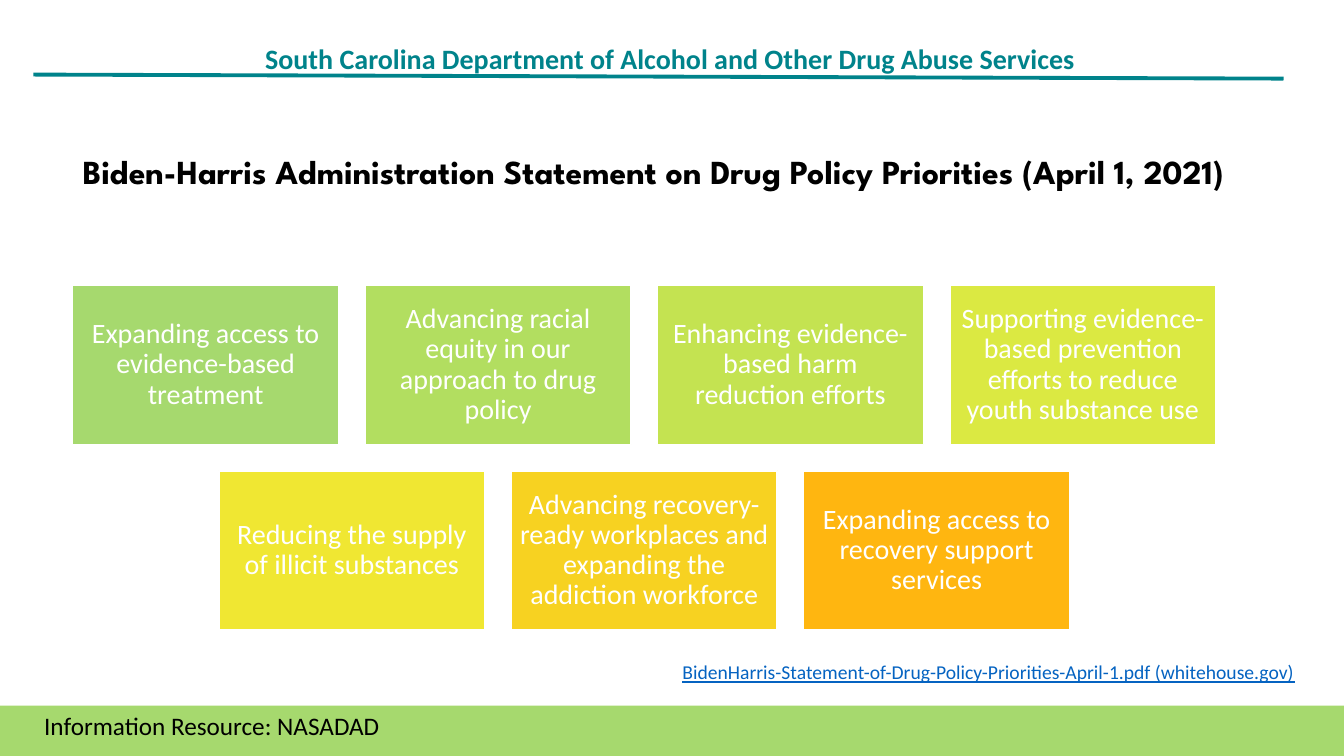
from lxml import etree
from pptx import Presentation
from pptx.dml.color import RGBColor
from pptx.enum.shapes import MSO_CONNECTOR, MSO_SHAPE
from pptx.enum.text import MSO_ANCHOR, PP_ALIGN
from pptx.oxml.ns import qn
from pptx.util import Pt

RECTANGLE, STRAIGHT = MSO_SHAPE.RECTANGLE, MSO_CONNECTOR.STRAIGHT
LEFT, CENTER = PP_ALIGN.LEFT, PP_ALIGN.CENTER
TOP, MIDDLE = MSO_ANCHOR.TOP, MSO_ANCHOR.MIDDLE

# Content
DEPARTMENT = "South Carolina Department of Alcohol and Other Drug Abuse Services"
TITLE = "Biden-Harris Administration Statement on Drug Policy Priorities (April 1, 2021)"
PRIORITY_ROWS = [
    [
        ("Expanding access to evidence-based treatment", "A6D96E"),
        ("Advancing racial equity in our approach to drug policy", "B2DE60"),
        ("Enhancing evidence-based harm reduction efforts", "C4E351"),
        ("Supporting evidence-based prevention efforts to reduce youth substance use", "DBE942"),
    ],
    [
        ("Reducing the supply of illicit substances", "F0E732"),
        ("Advancing recovery-ready workplaces and expanding the addiction workforce", "F7D221"),
        ("Expanding access to recovery support services", "FFB610"),
    ],
]
SOURCE = "BidenHarris-Statement-of-Drug-Policy-Priorities-April-1.pdf (whitehouse.gov)"
RESOURCE = "Information Resource: NASADAD"

TEAL, GREEN, WHITE, BLACK, LINK_BLUE = "00838B", "A6D96E", "FFFFFF", "000000", "0563C1"

# Layout in px, 100 to the inch
EMU_PER_PX = 9144
SLIDE_W, SLIDE_H = 1333, 750
CARD_W, CARD_H, CARD_GAP = 264, 158, 26
CARDS_TOP, CARDS_CENTER = 283, 639


def px(*lengths):
    return [length * EMU_PER_PX for length in lengths]


def rgb(code):
    return RGBColor.from_string(code)


def write(shape, text, size, color, font="Calibri", bold=False, underline=False,
          align=LEFT, anchor=TOP, spacing=1.0, insets=(10, 5), wrap=True):
    frame = shape.text_frame
    frame.word_wrap = wrap
    frame.vertical_anchor = anchor
    frame.margin_left = frame.margin_right = insets[0] * EMU_PER_PX
    frame.margin_top = frame.margin_bottom = insets[1] * EMU_PER_PX
    paragraph = frame.paragraphs[0]
    paragraph.text = text
    paragraph.alignment = align
    paragraph.line_spacing = spacing
    paragraph.font.name = font
    paragraph.font.size = Pt(size)
    paragraph.font.bold = bold
    paragraph.font.underline = underline
    paragraph.font.color.rgb = rgb(color)


def add_block(box, fill, outline=None):
    block = slide.shapes.add_shape(RECTANGLE, *px(*box))
    block.shadow.inherit = False
    block.fill.solid()
    block.fill.fore_color.rgb = rgb(fill)
    if outline:
        block.line.color.rgb = rgb(outline)
        block.line.width = Pt(1.25)
    else:
        block.line.fill.background()
    return block


def add_text(box, text, size, color, **style):
    write(slide.shapes.add_textbox(*px(*box)), text, size, color, **style)


prs = Presentation()
prs.slide_width, prs.slide_height = px(SLIDE_W, SLIDE_H)
slide = prs.slides.add_slide(prs.slide_layouts[6])

# Header with rule, and footer band
add_text((256, 28, 1021, 63), DEPARTMENT, 20, TEAL, bold=True,
         anchor=MIDDLE, spacing=0.9, insets=(7, 4))
rule = slide.shapes.add_connector(STRAIGHT, *px(33, 74, 1273, 78))
rule.line.color.rgb = rgb(TEAL)
rule.line.width = Pt(2.75)
etree.SubElement(rule._element.spPr, qn("a:effectLst"))
add_block((0, 700, SLIDE_W, 50), GREEN)

# Title
add_text((72, 119, 1242, 106), TITLE, 24, BLACK, font="League Spartan",
         bold=True, anchor=MIDDLE, spacing=0.9)

# Priority cards, each row centred
for row, priorities in enumerate(PRIORITY_ROWS):
    row_width = len(priorities) * (CARD_W + CARD_GAP) - CARD_GAP
    row_left = CARDS_CENTER - row_width // 2
    card_top = CARDS_TOP + row * (CARD_H + CARD_GAP)
    for column, (priority, fill) in enumerate(priorities):
        card_left = row_left + column * (CARD_W + CARD_GAP)
        card = add_block((card_left, card_top, CARD_W, CARD_H), fill, WHITE)
        write(card, priority, 20, WHITE, align=CENTER, anchor=MIDDLE,
              spacing=0.9, insets=(8, 8))

# Source and resource lines
add_text((667, 650, 666, 34), SOURCE, 14, LINK_BLUE, underline=True)
add_text((34, 700, 356, 40), RESOURCE, 18, BLACK, wrap=False)

prs.save("out.pptx")
